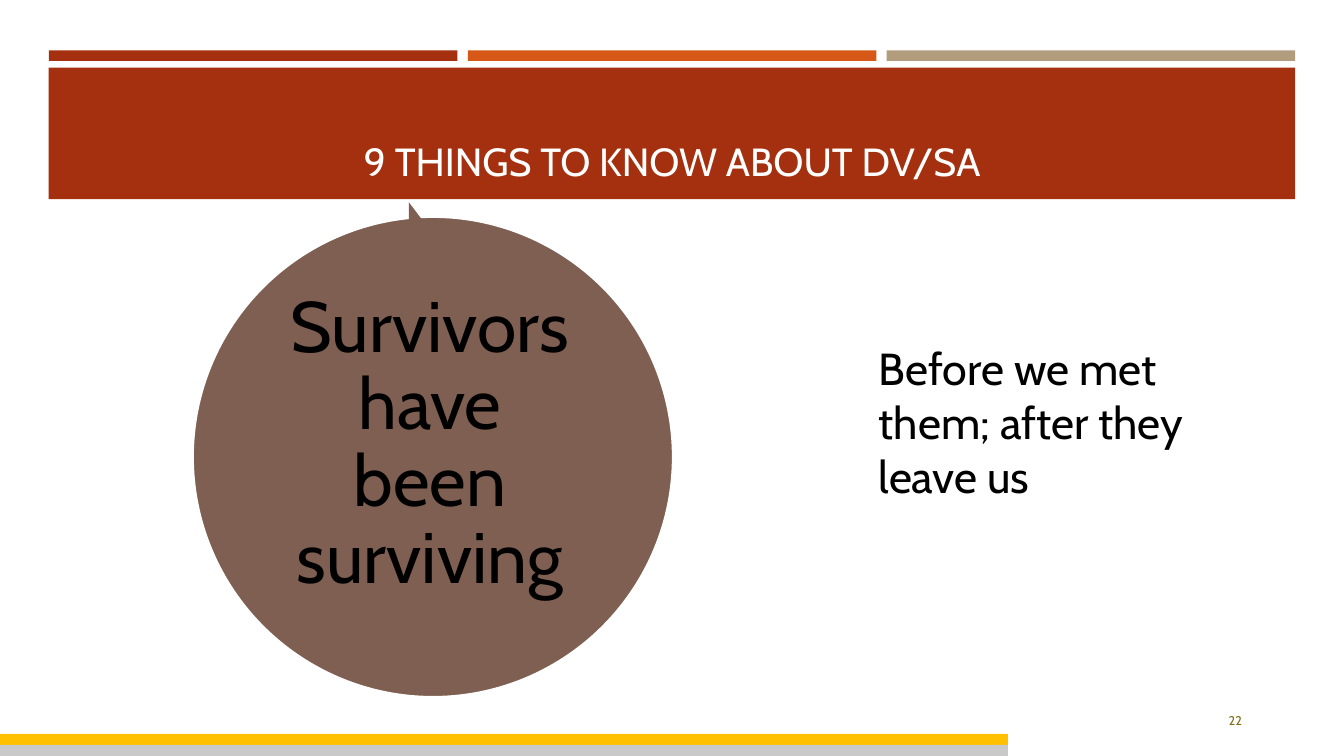
from pptx import Presentation
from pptx.dml.color import RGBColor
from pptx.enum.shapes import MSO_SHAPE
from pptx.enum.text import MSO_ANCHOR, MSO_AUTO_SIZE, PP_ALIGN
from pptx.util import Pt

COLORS = {
    "rust": "A5300F", "orange": "D55816", "sand": "B19C7D", "brown": "7F5F52",
    "gold": "FFC000", "gray": "C9C9C9", "white": "FFFFFF", "black": "000000",
    "olive": "826A12",
}
FONT = "Cabin"

TITLE = {
    "text": "9 THINGS TO KNOW ABOUT DV/SA", "at": (46, 55.4, 868, 80),
    "size": 28, "color": "white", "align": PP_ALIGN.CENTER,
    "anchor": MSO_ANCHOR.BOTTOM,
}
TEXTS = [
    {"text": "Survivors have been surviving", "at": (198, 208.8, 218, 218),
     "size": 51, "color": "black", "align": PP_ALIGN.CENTER,
     "anchor": MSO_ANCHOR.MIDDLE, "inset": 5, "spacing": 0.9},
    {"text": "Before we met them; after they leave us",
     "at": (620.6, 239.8, 232.6, 123.8), "size": 32, "color": "black",
     "align": PP_ALIGN.LEFT, "anchor": MSO_ANCHOR.TOP},
    {"text": "22", "at": (678.2, 500.4, 216, 28.8), "size": 9,
     "color": "olive", "align": PP_ALIGN.RIGHT, "anchor": MSO_ANCHOR.MIDDLE},
]

STRIPE_COLORS = ["rust", "orange", "sand"]
STRIPE_LEFT, STRIPE_TOP, STRIPE_WIDTH, STRIPE_HEIGHT = 35, 36, 291.8, 7.6
STRIPE_STEP = 299.2
BANNER = (34.8, 48.4, 890.4, 93.8)
CIRCLE = (137.6, 154.8, 343.2, 343.2)
POINTER = [(292, 144.4), (292, 157), (301.5, 157)]
FOOTER_COLORS = ["gold", "gray"]
FOOTER_TOP, FOOTER_WIDTH, FOOTER_HEIGHT = 524.2, 720, 7.9


def color_of(name):
    return RGBColor.from_string(COLORS[name])


def paint(shape, color):
    shape.shadow.inherit = False
    shape.fill.solid()
    shape.fill.fore_color.rgb = color_of(color)
    shape.line.fill.background()


def add_block(page, kind, place, color):
    shape = page.shapes.add_shape(kind, *map(Pt, place))
    paint(shape, color)
    return shape


def write(box, item):
    for name, length in zip(("left", "top", "width", "height"), item["at"]):
        setattr(box, name, Pt(length))
    frame = box.text_frame
    layout = {"word_wrap": True, "auto_size": MSO_AUTO_SIZE.NONE,
              "vertical_anchor": item["anchor"]}
    if "inset" in item:
        for side in ("left", "top", "right", "bottom"):
            layout["margin_" + side] = Pt(item["inset"])
    for name, value in layout.items():
        setattr(frame, name, value)
    para = frame.paragraphs[0]
    para.alignment = item["align"]
    para.line_spacing = item.get("spacing", 1.0)
    span = para.add_run()
    span.text = item["text"]
    for name, value in {"name": FONT, "size": Pt(item["size"])}.items():
        setattr(span.font, name, value)
    span.font.color.rgb = color_of(item["color"])


def main():
    deck = Presentation()
    deck.slide_width, deck.slide_height = Pt(960), Pt(540)
    page = deck.slides.add_slide(deck.slide_layouts[5])
    title = page.shapes.title

    for index, color in enumerate(STRIPE_COLORS):
        left = STRIPE_LEFT + index * STRIPE_STEP
        add_block(page, MSO_SHAPE.RECTANGLE,
                  (left, STRIPE_TOP, STRIPE_WIDTH, STRIPE_HEIGHT), color)
    banner = add_block(page, MSO_SHAPE.RECTANGLE, BANNER, "rust")
    banner.element.addnext(title.element)
    write(title, TITLE)

    circle = add_block(page, MSO_SHAPE.OVAL, CIRCLE, "brown")
    circle.line.color.rgb = color_of("white")
    circle.line.width = Pt(1.75)
    points = [(Pt(x), Pt(y)) for x, y in POINTER]
    builder = page.shapes.build_freeform(*points[0])
    builder.add_line_segments(points[1:], close=True)
    paint(builder.convert_to_shape(), "brown")

    for item in TEXTS:
        write(page.shapes.add_textbox(*map(Pt, item["at"])), item)

    for index, color in enumerate(FOOTER_COLORS):
        top = FOOTER_TOP + index * FOOTER_HEIGHT
        add_block(page, MSO_SHAPE.RECTANGLE,
                  (0, top, FOOTER_WIDTH, FOOTER_HEIGHT), color)

    deck.save("out.pptx")


if __name__ == "__main__":
    main()
